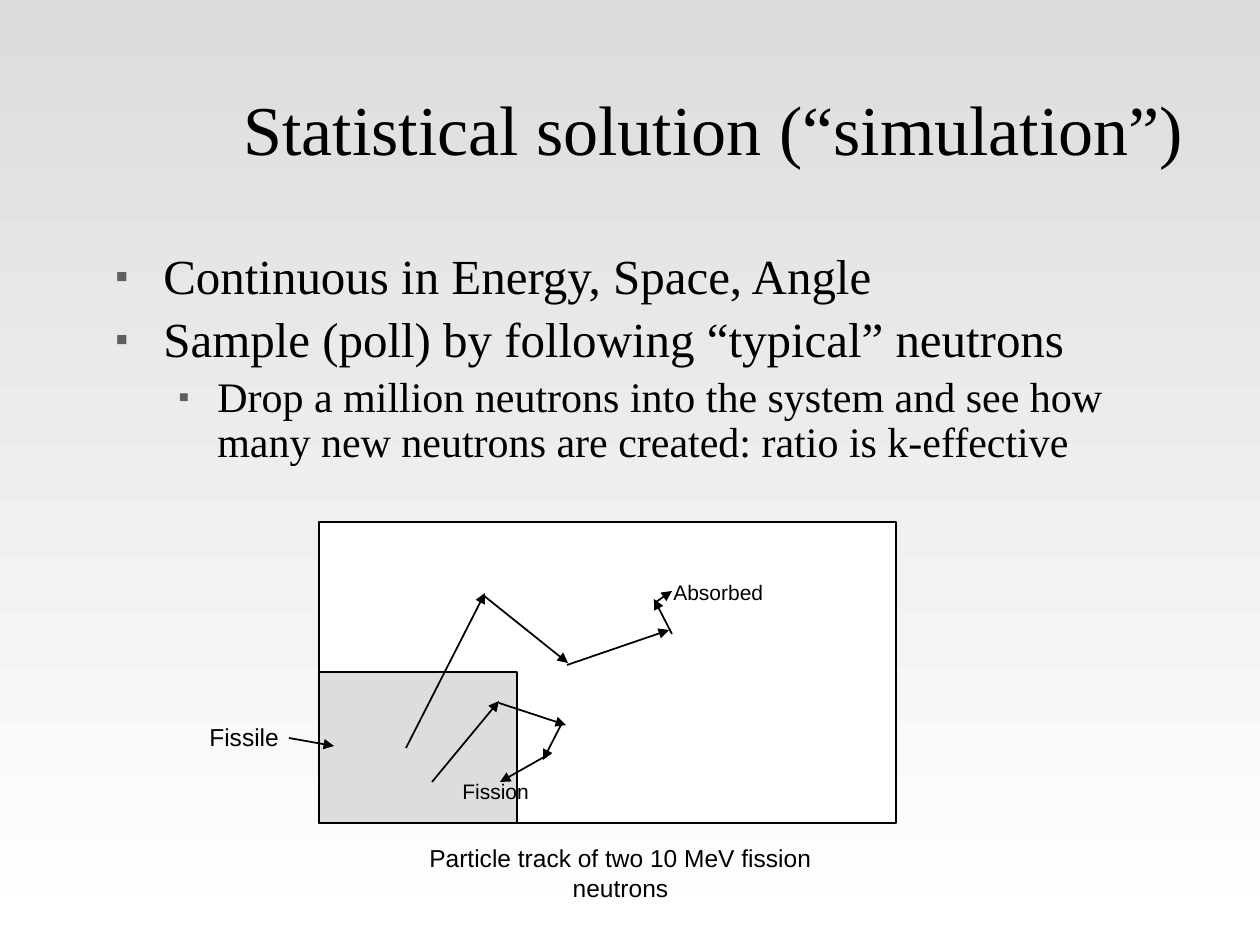
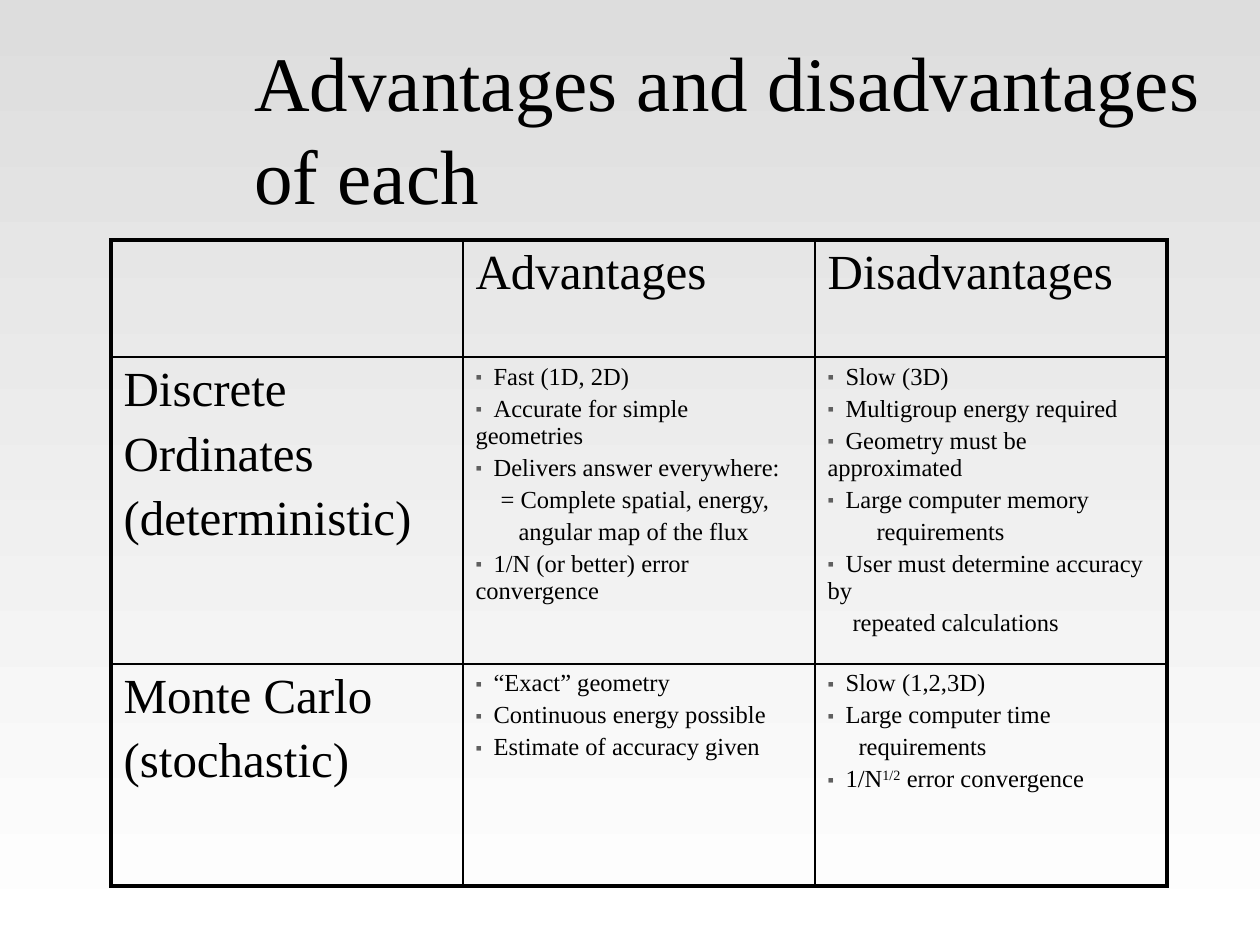
from lxml import etree
from pptx import Presentation
from pptx.dml.color import RGBColor
from pptx.enum.shapes import MSO_CONNECTOR, MSO_SHAPE
from pptx.enum.text import MSO_ANCHOR, PP_ALIGN
from pptx.oxml.ns import qn
from pptx.util import Pt

PX = 914400 / 126
STRAIGHT = MSO_CONNECTOR.STRAIGHT
RECTANGLE = MSO_SHAPE.RECTANGLE
TOP, MIDDLE = MSO_ANCHOR.TOP, MSO_ANCHOR.MIDDLE
LEFT, CENTER = PP_ALIGN.LEFT, PP_ALIGN.CENTER
SERIF, SANS = "Times New Roman", "Arial"
BLACK, WHITE, GREY, BULLET_GREY = "000000", "FFFFFF", "DDDDDD", "5F5F5F"
THIN, THICK = 1, 2.25
BULLET_TAB = 18


def px(*lengths):
    return [round(length * PX) for length in lengths]


def color(hex_string):
    return RGBColor.from_string(hex_string)


def child(parent, tag, **attributes):
    return etree.SubElement(parent, qn(tag), {k: str(v) for k, v in attributes.items()})


class Deck:
    def __init__(self):
        self.prs = Presentation()
        self.prs.slide_width, self.prs.slide_height = px(1260, 945)
        self.slide = None

    def new_slide(self):
        self.slide = self.prs.slides.add_slide(self.prs.slide_layouts[6])
        fill = self.slide.background.fill
        fill.gradient()
        fill.gradient_angle = 270
        for stop, position, shade in zip(fill.gradient_stops, (0, 1), (GREY, WHITE)):
            stop.position = position
            stop.color.rgb = color(shade)

    def paragraph(self, frame, first, runs, size, font=SERIF, align=LEFT,
                  bullet=False, margin=0, indent=0, tab=0, spacing=None):
        para = frame.paragraphs[0] if first else frame.add_paragraph()
        properties = para._p.get_or_add_pPr()
        left, hanging = px(margin, indent)
        properties.set("marL", str(left))
        properties.set("indent", str(hanging))
        if bullet:
            child(child(properties, "a:buClr"), "a:srgbClr", val=BULLET_GREY)
            child(properties, "a:buSzPct", val=75000)
            child(properties, "a:buFont", typeface=SANS)
            child(properties, "a:buChar", char="▪")
        else:
            child(properties, "a:buNone")
        if tab:
            child(child(properties, "a:tabLst"), "a:tab", pos=px(tab)[0], algn="l")
        para.alignment = align
        para.space_before = Pt(0 if first else round(size * 0.2, 1))
        if spacing:
            para.line_spacing = spacing
        for text, baseline in runs:
            run = para.add_run()
            run.text = text
            run.font.size = Pt(size)
            run.font.name = font
            run.font.color.rgb = color(BLACK)
            if baseline:
                run.font._element.set("baseline", str(baseline * 1000))

    def text_box(self, box, anchor=TOP, wrap=True):
        frame = self.slide.shapes.add_textbox(*px(*box)).text_frame
        frame.word_wrap = wrap
        frame.vertical_anchor = anchor
        return frame

    def title(self, text, box, size):
        self.paragraph(self.text_box(box, MIDDLE), True, [(text, 0)], size)

    def label(self, text, box, size, align=LEFT, wrap=True):
        self.paragraph(self.text_box(box, wrap=wrap), True, [(text, 0)], size, SANS, align)

    def bullets(self, box, items):
        frame = self.text_box(box)
        levels = [(28, 48, -48), (24, 102, -39)]
        for number, (level, text) in enumerate(items):
            size, margin, indent = levels[level]
            self.paragraph(frame, number == 0, [(text, 0)], size, bullet=True,
                           margin=margin, indent=indent, spacing=0.9)

    def rectangle(self, box, fill):
        shape = self.slide.shapes.add_shape(RECTANGLE, *px(*box))
        shape.shadow.inherit = False
        shape.fill.solid()
        shape.fill.fore_color.rgb = color(fill)
        shape.line.color.rgb = color(BLACK)
        shape.line.width = Pt(THIN)

    def arrow(self, start, end):
        line = self.slide.shapes.add_connector(STRAIGHT, *px(*start, *end))
        line.line.color.rgb = color(BLACK)
        line.line.width = Pt(THIN)
        child(line.line._get_or_add_ln(), "a:tailEnd", type="triangle")
        child(line._element.spPr, "a:effectLst")

    def border(self, cell, side, width):
        edge = child(cell._tc.get_or_add_tcPr(), f"a:ln{side}", w=Pt(width))
        child(child(edge, "a:solidFill"), "a:srgbClr", val=BLACK)

    def table(self, corner, widths, heights, rows):
        box = px(*corner, sum(widths), sum(heights))
        table = self.slide.shapes.add_table(len(rows), len(widths), *box).table
        table.first_row = table.horz_banding = False
        for column, width in zip(table.columns, px(*widths)):
            column.width = width
        for row, height in zip(table.rows, px(*heights)):
            row.height = height
        last_row, last_column = len(rows) - 1, len(widths) - 1
        for r, contents in enumerate(rows):
            for c, lines in enumerate(contents):
                cell = table.cell(r, c)
                outer = {"L": c == 0, "R": c == last_column, "T": r == 0, "B": r == last_row}
                for side, is_outer in outer.items():
                    self.border(cell, side, THICK if is_outer else THIN)
                cell.fill.background()
                for number, line in enumerate(lines):
                    self.paragraph(cell.text_frame, number == 0, **line)


def heading(*lines):
    return [dict(runs=[(line, 0)], size=28) for line in lines]


def point(text, *more_runs):
    return dict(runs=[("\t" + text, 0), *more_runs], size=14, bullet=True, tab=BULLET_TAB)


def continued(text, margin):
    return dict(runs=[(text, 0)], size=14, margin=margin)


def simulation_slide(deck):
    deck.new_slide()
    deck.title("Statistical solution (“simulation”)", (231, 48, 1029, 158), 40)
    deck.bullets((103, 246, 1071, 144), [
        (0, "Continuous in Energy, Space, Angle"),
        (0, "Sample (poll) by following “typical” neutrons"),
        (1, "Drop a million neutrons into the system and see how many new neutrons "
            "are created: ratio is k-effective"),
    ])
    deck.label("Particle track of two 10 MeV fission neutrons", (404, 837, 433, 72), 14, CENTER)
    deck.rectangle((319, 522, 577, 301), WHITE)
    deck.rectangle((319, 672, 198, 151), GREY)
    deck.label("Fissile", (197, 716, 154, 42), 14)
    fissile_pointer = [((289, 738), (334, 746))]
    absorbed_track = [
        ((406, 748), (485, 593)),
        ((483, 595), (568, 663)),
        ((567, 665), (669, 630)),
        ((672, 634), (654, 599)),
        ((656, 602), (672, 591)),
    ]
    fission_track = [
        ((432, 782), (499, 701)),
        ((499, 703), (566, 725)),
        ((562, 723), (543, 760)),
        ((544, 757), (500, 782)),
    ]
    for start, end in fissile_pointer + absorbed_track + fission_track:
        deck.arrow(start, end)
    deck.label("Absorbed", (661, 573, 115, 38), 12, wrap=False)
    deck.label("Fission", (450, 772, 92, 38), 12, wrap=False)


def comparison_slide(deck):
    deck.new_slide()
    deck.title("Advantages and disadvantages of each", (242, 48, 987, 158), 44)
    deck.table((111, 240), [352] * 3, [117, 286, 222], [
        [[], heading("Advantages"), heading("Disadvantages")],
        [
            heading("Discrete", "Ordinates", "(deterministic)"),
            [
                point("Fast (1D, 2D)"),
                point("Accurate for simple geometries"),
                point("Delivers answer everywhere:"),
                continued("= Complete spatial, energy,", 25),
                continued("angular map of the flux", 43),
                point("1/N (or better) error convergence"),
            ],
            [
                point("Slow (3D)"),
                point("Multigroup energy required"),
                point("Geometry must be approximated"),
                point("Large computer memory"),
                continued("requirements", 49),
                point("User must determine accuracy by"),
                continued("repeated calculations", 25),
            ],
        ],
        [
            heading("Monte Carlo", "(stochastic)"),
            [
                point("“Exact” geometry"),
                point("Continuous energy possible"),
                point("Estimate of accuracy given"),
            ],
            [
                point("Slow (1,2,3D)"),
                point("Large computer time"),
                continued("requirements", 31),
                point("1/N", ("1/2", 30), (" error convergence", 0)),
            ],
        ],
    ])


def main():
    deck = Deck()
    simulation_slide(deck)
    comparison_slide(deck)
    deck.prs.save("out.pptx")


if __name__ == "__main__":
    main()
